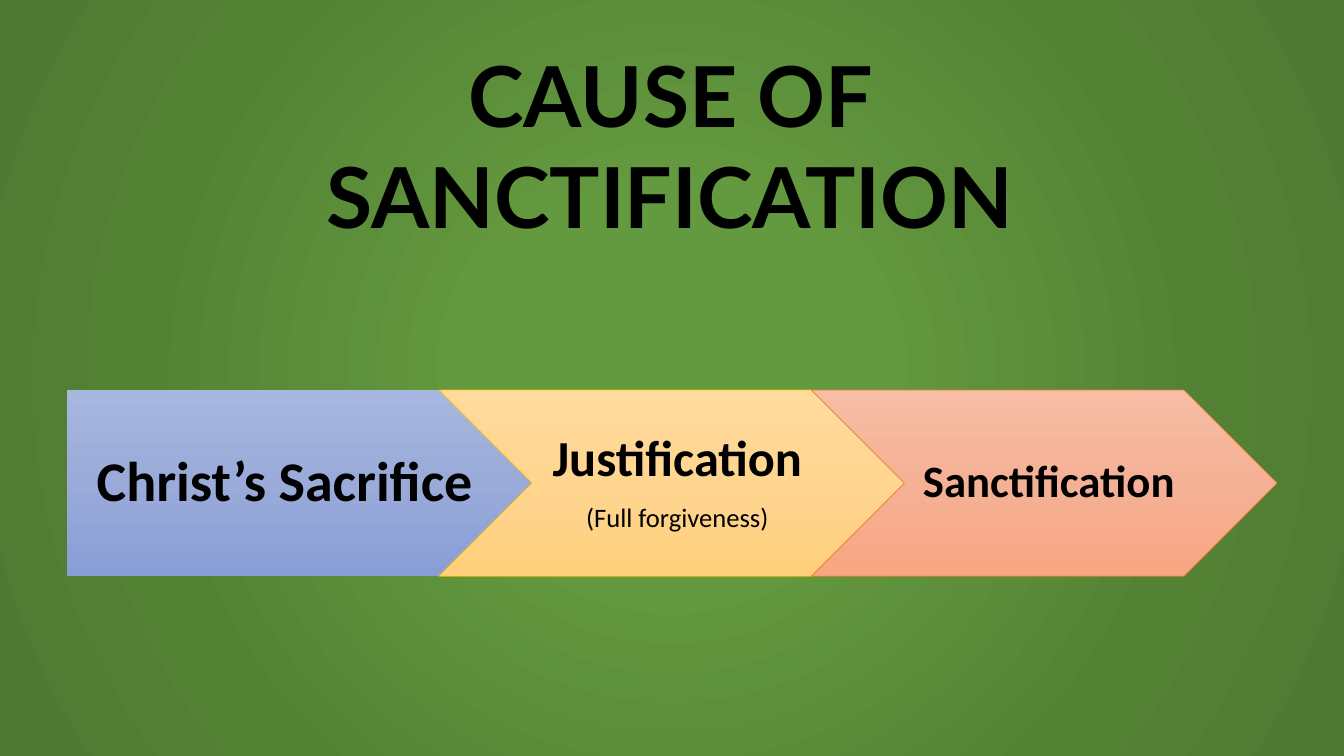
from lxml.etree import SubElement
from pptx import Presentation
from pptx.dml.color import RGBColor
from pptx.enum.shapes import MSO_SHAPE as SHAPE
from pptx.enum.text import MSO_ANCHOR as ANCHOR, MSO_AUTO_SIZE as AUTO, PP_ALIGN as ALIGN
from pptx.oxml.ns import qn
from pptx.util import Cm, Pt

COLORS = {
    "text": "000000",
    "gold": "FFC000",
    "orange": "ED7D31",
}
BACKGROUND = [(0, "649A3F"), (23, "649A3F"), (69, "548235"), (97, "4E7932")]
BLUES = [(0, "A8B7DF"), (50, "9AABD9"), (100, "889ED7")]
YELLOWS = [(0, "FFDB9E"), (50, "FFD590"), (100, "FFD07C")]
SALMONS = [(0, "F7BDA5"), (50, "F5B196"), (100, "F8A582")]


class Deck:
    title_font, body_font = "Lato", "Calibri"

    def __init__(self, prs):
        self.s = prs.slides.add_slide(prs.slide_layouts[6])

    def gradient(self, fill, element, stops, radial=False):
        fill.gradient()
        grad = element.find(".//" + qn("a:gradFill"))
        for child in list(grad):
            grad.remove(child)
        stop_list = SubElement(grad, qn("a:gsLst"))
        for percent, color in stops:
            gs = SubElement(stop_list, qn("a:gs"), pos=str(percent * 1000))
            SubElement(gs, qn("a:srgbClr"), val=color)
        if radial:
            shade = SubElement(grad, qn("a:path"), path="circle")
            SubElement(shade, qn("a:fillToRect"), l="50000", t="50000", r="50000", b="50000")
        else:
            SubElement(grad, qn("a:lin"), ang="5400000", scaled="0")

    def background(self, stops):
        self.gradient(self.s.background.fill, self.s.element, stops, radial=True)

    def paragraph(self, p, text, size, bold, font):
        p.text = text
        p.alignment = ALIGN.CENTER
        p.font.name, p.font.size, p.font.bold = font, Pt(size), bold
        p.font.color.rgb = RGBColor.from_string(COLORS["text"])

    def title(self, text, x, y, w, h, size):
        tf = self.s.shapes.add_textbox(Cm(x), Cm(y), Cm(w), Cm(h)).text_frame
        tf.word_wrap = True
        tf.auto_size = AUTO.SHAPE_TO_FIT_TEXT
        self.paragraph(tf.paragraphs[0], text, size, True, self.title_font)

    def arrow(self, kind, x, y, w, h, stops, line, insets, lines):
        sp = self.s.shapes.add_shape(kind, Cm(x), Cm(y), Cm(w), Cm(h))
        sp.shadow.inherit = False
        self.gradient(sp.fill, sp.element, stops)
        if line:
            sp.line.color.rgb = RGBColor.from_string(COLORS[line])
            sp.line.width = Pt(0.5)
        else:
            sp.line.fill.background()
        tf = sp.text_frame
        tf.word_wrap = True
        tf.vertical_anchor = ANCHOR.MIDDLE
        left, right, vertical = insets
        tf.margin_left, tf.margin_right = Cm(left), Cm(right)
        tf.margin_top = tf.margin_bottom = Cm(vertical)
        for i, (text, size, bold) in enumerate(lines):
            p = tf.add_paragraph() if i else tf.paragraphs[0]
            self.paragraph(p, text, size, bold, self.body_font)
            p.line_spacing = 0.9
            # Space after as a share of the line, which needs XML
            p.space_after = Pt(0)
            after = p._p.pPr.find(qn("a:spcAft"))
            after.remove(after[0])
            SubElement(after, qn("a:spcPct"), val="35000")


def main():
    prs = Presentation()
    prs.slide_width, prs.slide_height = Cm(33.87), Cm(19.05)
    deck = Deck(prs)
    deck.background(BACKGROUND)

    # Process arrows, each overlapping the one before by its tip
    steps = [
        (SHAPE.PENTAGON, BLUES, None, (0.58, 0.15, 0.3),
         [("Christ’s Sacrifice", 40, True)]),
        (SHAPE.CHEVRON, YELLOWS, "gold", (0.41, 0.13, 0.25),
         [("Justification", 36, True), ("(Full forgiveness)", 19, False)]),
        (SHAPE.CHEVRON, SALMONS, "orange", (0.36, 0.12, 0.23),
         [("Sanctification", 32, True)]),
    ]
    left, top, width, height = 1.68, 9.83, 11.73, 4.69
    pitch = width - height / 2
    for i, (kind, stops, line, insets, lines) in enumerate(steps):
        deck.arrow(kind, left + i * pitch, top, width, height, stops, line, insets, lines)

    # Title
    deck.title("CAUSE OF SANCTIFICATION", 7.8, 0.97, 18.16, 5.38, 60)
    prs.save("out.pptx")


if __name__ == "__main__":
    main()
